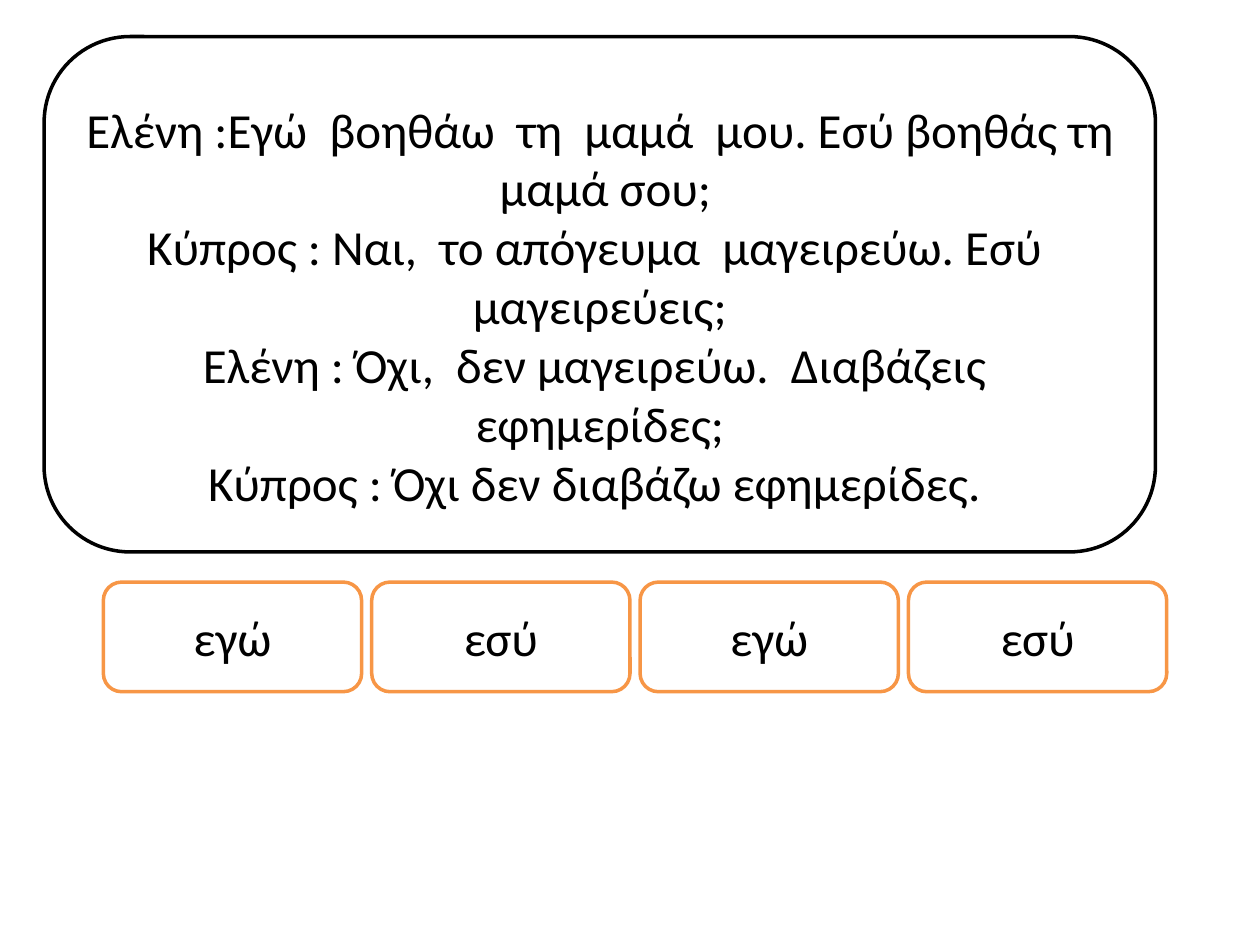
from dataclasses import dataclass

from pptx import Presentation
from pptx.dml.color import RGBColor
from pptx.enum.shapes import MSO_SHAPE
from pptx.enum.text import MSO_ANCHOR, PP_ALIGN
from pptx.util import Inches, Pt


@dataclass(frozen=True)
class Theme:
    """Hold the colours, font and sizes of the slide."""

    paper: RGBColor = RGBColor(0xFF, 0xFF, 0xFF)
    ink: RGBColor = RGBColor(0x00, 0x00, 0x00)
    accent: RGBColor = RGBColor(0xF7, 0x96, 0x46)
    font: str = "Calibri"
    text_size: int = 28
    line_width: int = 2


THEME = Theme()

DIALOGUE = [
    "Ελένη :Εγώ  βοηθάω  τη  μαμά  μου. Εσύ βοηθάς τη  μαμά σου;",
    "Κύπρος : Ναι,  το απόγευμα  μαγειρεύω. Εσύ  μαγειρεύεις;",
    "Ελένη : Όχι,  δεν μαγειρεύω.  Διαβάζεις  εφημερίδες;",
    "Κύπρος : Όχι δεν διαβάζω εφημερίδες. ",
]
PRONOUNS = ["εγώ", "εσύ", "εγώ", "εσύ"]


def write_text(paragraph, text, size=THEME.text_size, color=THEME.ink,
               alignment=PP_ALIGN.CENTER):
    """Write formatted text into a paragraph."""
    paragraph.alignment = alignment
    run = paragraph.add_run()
    run.text = text
    run.font.name = THEME.font
    run.font.size = Pt(size)
    run.font.color.rgb = color


def add_rounded_box(slide, lines, left, top, width, height, outline,
                    margin_top=0.05):
    """Add an outlined rounded box with one paragraph for each line."""
    shape = slide.shapes.add_shape(
        MSO_SHAPE.ROUNDED_RECTANGLE,
        Inches(left), Inches(top), Inches(width), Inches(height))
    shape.shadow.inherit = False
    shape.fill.solid()
    shape.fill.fore_color.rgb = THEME.paper
    shape.line.color.rgb = outline
    shape.line.width = Pt(THEME.line_width)
    frame = shape.text_frame
    frame.word_wrap = True
    frame.vertical_anchor = MSO_ANCHOR.MIDDLE
    frame.margin_top = Inches(margin_top)
    for index, line in enumerate(lines):
        paragraph = frame.add_paragraph() if index else frame.paragraphs[0]
        write_text(paragraph, line)


def add_pronoun_cards(slide, pronouns, left=0.82, top=4.62, pitch=2.13):
    """Add an evenly spaced row of pronoun cards."""
    for index, pronoun in enumerate(pronouns):
        add_rounded_box(slide, [pronoun], left + index * pitch, top,
                        2.05, 0.87, THEME.accent)


def main():
    """Build and save the dialogue slide."""
    presentation = Presentation()
    presentation.slide_width = Inches(10)
    presentation.slide_height = Inches(7.5)
    slide = presentation.slides.add_slide(presentation.slide_layouts[6])
    add_rounded_box(slide, DIALOGUE, 0.35, 0.29, 8.82, 4.09, THEME.ink,
                    margin_top=0.22)
    add_pronoun_cards(slide, PRONOUNS)
    presentation.save("out.pptx")


if __name__ == "__main__":
    main()
